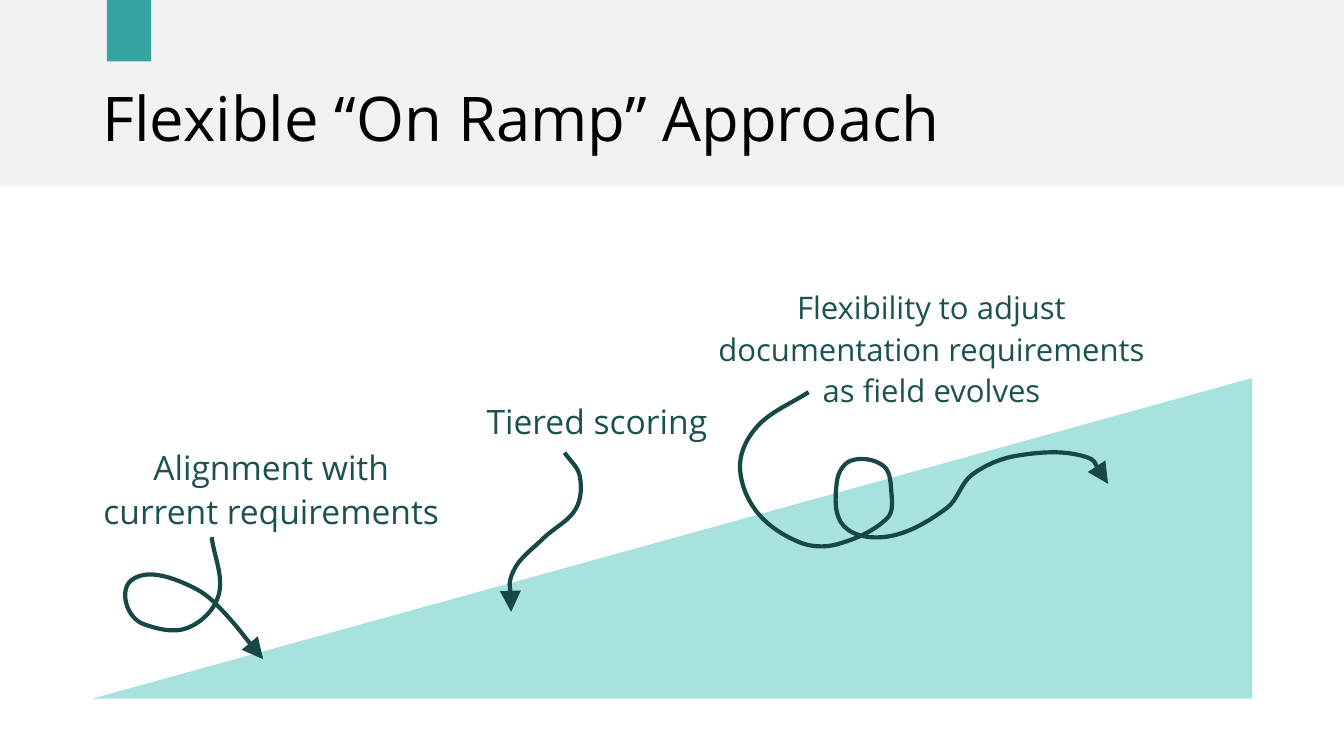
from dataclasses import dataclass
from itertools import pairwise
from math import atan2, cos, dist, sin
from typing import NamedTuple

from lxml.etree import SubElement
from pptx import Presentation
from pptx.dml.color import RGBColor
from pptx.enum.shapes import MSO_SHAPE
from pptx.enum.text import MSO_ANCHOR, PP_ALIGN
from pptx.oxml.ns import qn
from pptx.shapes.autoshape import Shape
from pptx.slide import Slide
from pptx.util import Inches, Pt

FONT = "Open Sans"
LINE_SPACING = 1.1
BLACK = RGBColor(0x00, 0x00, 0x00)
HEADER_GREY = RGBColor(0xF2, 0xF2, 0xF2)
ACCENT_TEAL = RGBColor(0x36, 0xA4, 0x9F)
RAMP_TEAL = RGBColor(0xA7, 0xE2, 0xDF)
LABEL_TEAL = RGBColor(0x1B, 0x52, 0x50)
ARROW_TEAL = RGBColor(0x18, 0x48, 0x46)

SLIDE_WIDTH, SLIDE_HEIGHT = 13.33, 7.5
MARGIN, CONTENT_WIDTH = 0.92, 11.5
HEADER_HEIGHT = 1.85
TITLE_TOP = 0.4


class Point(NamedTuple):
    x: float
    y: float

    def moved(self, heading: float, distance: float) -> "Point":
        return Point(self.x + distance * cos(heading),
                     self.y + distance * sin(heading))


class Box(NamedTuple):
    left: float
    top: float
    width: float
    height: float

    def lengths(self) -> list[int]:
        return [Inches(value) for value in self]


@dataclass(frozen=True)
class Label:
    text: str
    box: Box
    size: float = 24
    color: RGBColor = LABEL_TEAL
    align: PP_ALIGN = PP_ALIGN.CENTER
    anchor: MSO_ANCHOR = MSO_ANCHOR.TOP


@dataclass(frozen=True)
class Step:
    """A label and the waypoints its arrow passes on the way to the ramp."""
    label: Label
    waypoints: list[Point]


HEADER = Box(0, 0, SLIDE_WIDTH, HEADER_HEIGHT)
ACCENT = Box(1.06, 0, 0.44, 0.61)
RAMP = Box(MARGIN, 3.75, CONTENT_WIDTH, 3.18)
TITLE = Label("Flexible “On Ramp” Approach",
              Box(MARGIN, TITLE_TOP, CONTENT_WIDTH, HEADER_HEIGHT - TITLE_TOP),
              44, BLACK, PP_ALIGN.LEFT, MSO_ANCHOR.MIDDLE)

ALIGNMENT = Step(
    Label("Alignment with current requirements", Box(0.85, 4.34, 3.68, 0.99)),
    [Point(2.1, 5.33), Point(2.17, 5.9), Point(1.86, 6.23), Point(1.42, 6.19),
     Point(1.26, 6.01), Point(1.28, 5.78), Point(1.52, 5.7), Point(1.92, 5.83),
     Point(2.16, 6.01), Point(2.61, 6.54)])

SCORING = Step(
    Label("Tiered scoring", Box(4.08, 3.89, 3.68, 0.99)),
    [Point(5.6, 4.49), Point(5.75, 4.72), Point(5.71, 5.05), Point(5.39, 5.34),
     Point(5.09, 5.67), Point(5.07, 6.07)])

FLEXIBILITY = Step(
    Label("Flexibility to adjust documentation requirements as field evolves",
          Box(6.97, 2.78, 4.54, 1.45), 22.2),
    [Point(8.02, 3.89), Point(7.52, 4.22), Point(7.34, 4.61), Point(7.5, 5.07),
     Point(7.93, 5.38), Point(8.3, 5.4), Point(8.8, 5.14), Point(8.84, 4.87),
     Point(8.76, 4.62), Point(8.44, 4.57), Point(8.3, 4.78), Point(8.37, 5.22),
     Point(8.82, 5.32), Point(9.39, 5.04), Point(9.64, 4.71),
     Point(10.09, 4.52), Point(10.76, 4.53), Point(10.99, 4.8)])


def add_block(slide: Slide, preset: MSO_SHAPE, box: Box, color: RGBColor) -> Shape:
    block = slide.shapes.add_shape(preset, *box.lengths())
    block.shadow.inherit = False
    block.fill.solid()
    block.fill.fore_color.rgb = color
    block.line.fill.background()
    return block


def add_label(slide: Slide, label: Label) -> None:
    frame = slide.shapes.add_textbox(*label.box.lengths()).text_frame
    frame.word_wrap = True
    frame.vertical_anchor = label.anchor
    frame.text = label.text
    paragraph = frame.paragraphs[0]
    paragraph.alignment = label.align
    paragraph.line_spacing = LINE_SPACING
    font = paragraph.runs[0].font
    font.name = FONT
    font.size = Pt(label.size)
    font.color.rgb = label.color


def smooth_controls(waypoints: list[Point]) -> list[Point]:
    """Give two control points and the end of each Bezier after the start.

    The curve crosses a waypoint parallel to the line between its neighbours;
    each control point lies a third of the way along the span.
    """
    before = [waypoints[0], *waypoints[:-1]]
    after = [*waypoints[1:], waypoints[-1]]
    headings = [atan2(b.y - a.y, b.x - a.x) for a, b in zip(before, after)]
    controls: list[Point] = []
    for (start, leaving), (end, arriving) in pairwise(zip(waypoints, headings)):
        reach = dist(start, end) / 3
        controls += [start.moved(leaving, reach), end.moved(arriving, -reach), end]
    return controls


def bend_segments(outline: Shape) -> None:
    """Turn each run of three straight segments into one cubic Bezier."""
    path = next(outline._element.iter(qn("a:path")))
    straight = path.findall(qn("a:lnTo"))
    for first in range(0, len(straight), 3):
        bezier = SubElement(path, qn("a:cubicBezTo"))
        for segment in straight[first:first + 3]:
            bezier.append(segment[0])
            path.remove(segment)


def add_curved_arrow(slide: Slide, waypoints: list[Point]) -> None:
    start = waypoints[0]
    builder = slide.shapes.build_freeform(Inches(start.x), Inches(start.y))
    builder.add_line_segments(
        [(Inches(point.x), Inches(point.y)) for point in smooth_controls(waypoints)],
        close=False)
    arrow = builder.convert_to_shape()
    bend_segments(arrow)
    arrow.shadow.inherit = False
    arrow.fill.background()
    arrow.line.color.rgb = ARROW_TEAL
    arrow.line.width = Pt(3)
    SubElement(arrow.line._get_or_add_ln(), qn("a:tailEnd"),
               type="triangle", w="lg", len="lg")


def main() -> None:
    presentation = Presentation()
    presentation.slide_width = Inches(SLIDE_WIDTH)
    presentation.slide_height = Inches(SLIDE_HEIGHT)
    slide = presentation.slides.add_slide(presentation.slide_layouts[6])

    add_block(slide, MSO_SHAPE.RECTANGLE, HEADER, HEADER_GREY)
    add_block(slide, MSO_SHAPE.RECTANGLE, ACCENT, ACCENT_TEAL)
    add_label(slide, TITLE)

    ramp = add_block(slide, MSO_SHAPE.RIGHT_TRIANGLE, RAMP, RAMP_TEAL)
    ramp._element.spPr.xfrm.set("flipH", "1")

    for step in (ALIGNMENT, SCORING, FLEXIBILITY):
        add_label(slide, step.label)
        add_curved_arrow(slide, step.waypoints)

    presentation.save("out.pptx")


if __name__ == "__main__":
    main()
